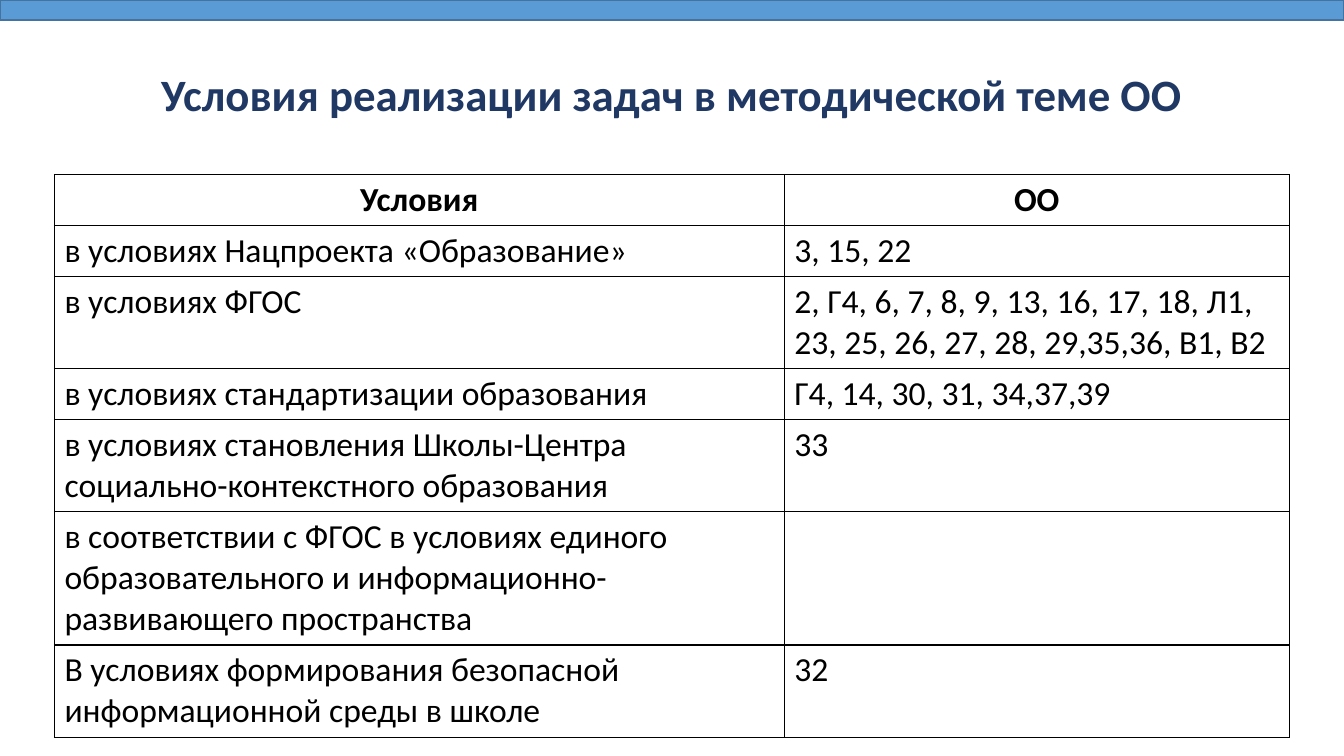
from lxml.etree import SubElement
from pptx import Presentation
from pptx.dml.color import RGBColor
from pptx.enum.shapes import MSO_SHAPE
from pptx.enum.text import MSO_ANCHOR, PP_ALIGN
from pptx.oxml.ns import qn
from pptx.util import Pt

TITLE = "Условия реализации задач в методической теме ОО"
ROWS = [
    ("Условия", "ОО", 1),
    ("в условиях Нацпроекта «Образование»", "3, 15, 22", 1),
    ("в условиях ФГОС",
     "2, Г4, 6, 7, 8, 9, 13, 16, 17, 18, Л1, 23, 25, 26, 27, 28, 29,35,36, В1, В2", 2),
    ("в условиях стандартизации образования", "Г4, 14, 30, 31, 34,37,39", 1),
    ("в условиях становления Школы-Центра социально-контекстного образования", "33", 2),
    ("в соответствии с ФГОС в условиях единого образовательного и "
     "информационно-развивающего пространства", "", 3),
    ("В условиях формирования безопасной информационной среды в школе", "32", 2),
]
COLS = [521.3, 360.7]
LINE, PAD = 29.3, 7.2
COLORS = {"title": "203864", "text": "000000", "cell": "FFFFFF",
          "bar": "5B9BD5", "edge": "43739E"}


def color(name):
    return RGBColor.from_string(COLORS[name])


def style(para, size, name, bold, align):
    para.alignment = align
    font = para.font
    font.name = "Calibri"
    font.size = Pt(size)
    font.bold = bold
    font.color.rgb = color(name)


def border(cell):
    props = cell._tc.get_or_add_tcPr()
    for side in ("lnL", "lnR", "lnT", "lnB"):
        line = SubElement(props, qn("a:" + side), w=str(Pt(1)))
        fill = SubElement(line, qn("a:solidFill"))
        SubElement(fill, qn("a:srgbClr"), val=COLORS["text"])


def add_title(slide):
    box = slide.shapes.add_textbox(Pt(66), Pt(34.5), Pt(828), Pt(69))
    frame = box.text_frame
    frame.word_wrap = True
    frame.vertical_anchor = MSO_ANCHOR.MIDDLE
    frame.text = TITLE
    para = frame.paragraphs[0]
    para.line_spacing = 0.9
    style(para, 32, "title", True, PP_ALIGN.CENTER)


def add_grid(slide):
    sizes = [PAD + LINE * lines for *_, lines in ROWS]
    table = slide.shapes.add_table(
        len(ROWS), len(COLS), Pt(38.9), Pt(124.6), Pt(sum(COLS)), Pt(sum(sizes))).table
    table.first_row = False
    table.horz_banding = False
    for col, width in zip(table.columns, COLS):
        col.width = Pt(width)
    for index, (*texts, lines) in enumerate(ROWS):
        table.rows[index].height = Pt(sizes[index])
        head = index == 0
        align = PP_ALIGN.CENTER if head else PP_ALIGN.LEFT
        for cell, text in zip(table.rows[index].cells, texts):
            border(cell)
            cell.fill.solid()
            cell.fill.fore_color.rgb = color("cell")
            cell.text = text
            style(cell.text_frame.paragraphs[0], 24, "text", head, align)


def add_bar(slide, width):
    bar = slide.shapes.add_shape(MSO_SHAPE.RECTANGLE, 0, 0, width, Pt(14.4))
    bar.shadow.inherit = False
    bar.fill.solid()
    bar.fill.fore_color.rgb = color("bar")
    bar.line.color.rgb = color("edge")
    bar.line.width = Pt(1)


def main():
    deck = Presentation()
    deck.slide_width, deck.slide_height = Pt(960), Pt(540)
    slide = deck.slides.add_slide(deck.slide_layouts[6])
    add_title(slide)
    add_grid(slide)
    add_bar(slide, deck.slide_width)
    deck.save("out.pptx")


if __name__ == "__main__":
    main()
